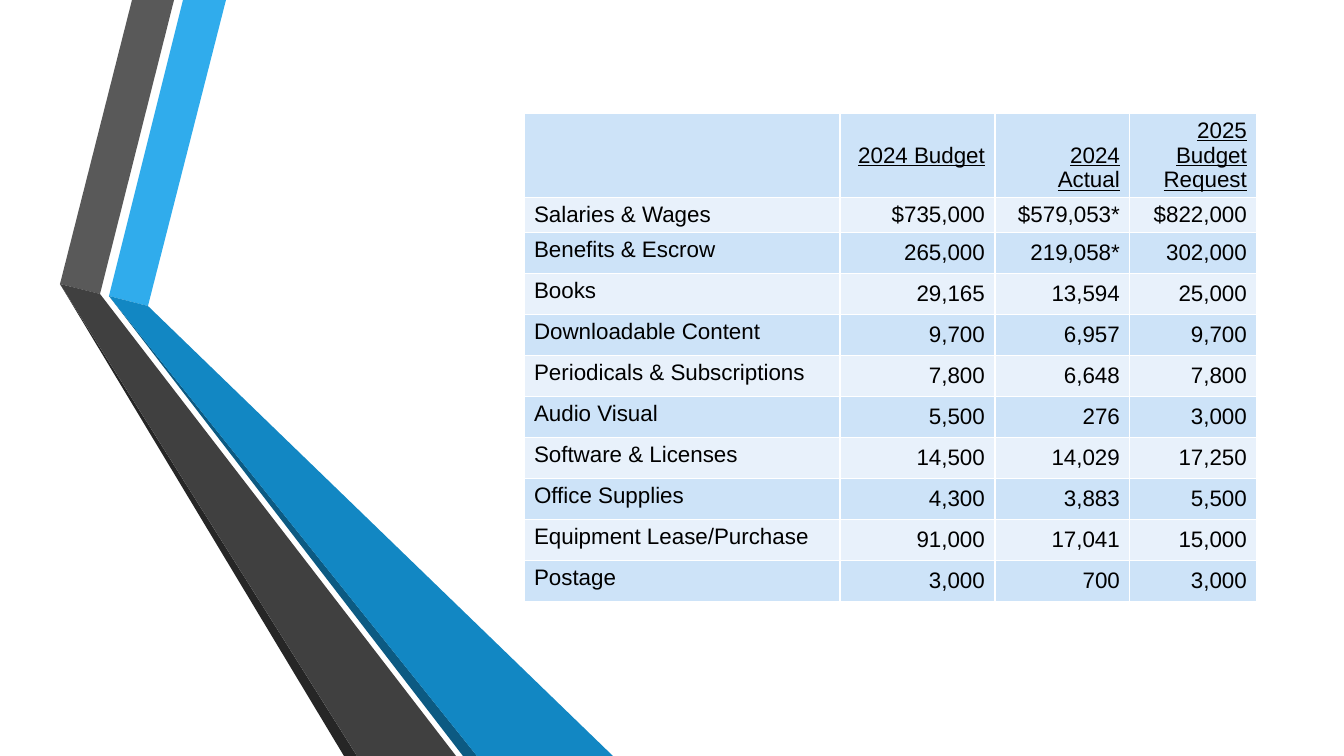
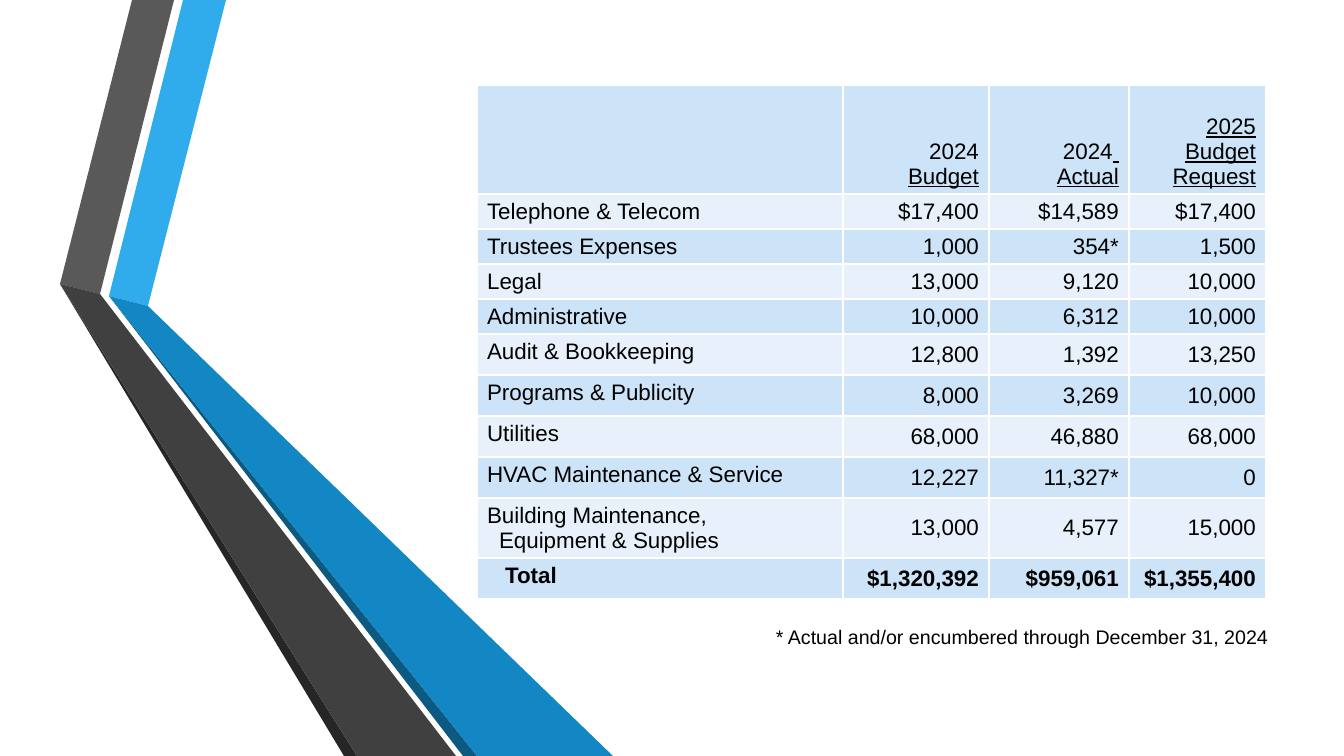
from lxml import etree
from pptx import Presentation
from pptx import util as u
from pptx.dml.color import RGBColor
from pptx.enum import text
from pptx.oxml import ns

# Scale and style
PX = 914400 / 100.8
FONT = "Arial"
BLACK = RGBColor(0x00, 0x00, 0x00)
PALE = RGBColor(0xE8, 0xF1, 0xFB)
SOFT = RGBColor(0xCD, 0xE3, 0xF8)
SKY = RGBColor(0x30, 0xAC, 0xEC)
BLUE = RGBColor(0x12, 0x87, 0xC3)
NAVY = RGBColor(0x0C, 0x5A, 0x82)
GRAY = RGBColor(0x59, 0x59, 0x59)
DARK = RGBColor(0x40, 0x40, 0x40)
COAL = RGBColor(0x26, 0x26, 0x26)
EDGE = "FFFFFF"
TOP, MID, LOW = (text.MSO_ANCHOR.TOP, text.MSO_ANCHOR.MIDDLE,
                 text.MSO_ANCHOR.BOTTOM)

# Folded bands shared by both slides, from back to front
BANDS = [
    (SKY, [(109, 296), (148, 306), (226, 0), (183, 0)]),
    (GRAY, [(100, 294), (174, 0), (132, 0), (60, 284)]),
    (COAL, [(60, 284), (344, 756), (357, 756)]),
    (NAVY, [(109, 296), (463, 756), (477, 756)]),
    (BLUE, [(109, 296), (477, 756), (613, 756), (148, 306)]),
    (DARK, [(456, 756), (100, 294), (60, 284), (357, 756)]),
]

# Header cells: anchor, then paragraphs of (words, underlined) runs
ASK = (LOW, [[("2025 Budget Request", True)]])
TABLES = [
    {
        "at": (524, 113),
        "cols": [316, 155, 135, 127],
        "rows": [84, 35] + [41] * 9,
        "head": [
            (MID, [[("2024 Budget", True)]]),
            (LOW, [[("2024 Actual", True)]]),
            ASK,
        ],
        "body": [
            ("Salaries & Wages", "$735,000", "$579,053*", "$822,000"),
            ("Benefits & Escrow", "265,000", "219,058*", "302,000"),
            ("Books", "29,165", "13,594", "25,000"),
            ("Downloadable Content", "9,700", "6,957", "9,700"),
            ("Periodicals & Subscriptions", "7,800", "6,648", "7,800"),
            ("Audio Visual", "5,500", "276", "3,000"),
            ("Software & Licenses", "14,500", "14,029", "17,250"),
            ("Office Supplies", "4,300", "3,883", "5,500"),
            ("Equipment Lease/Purchase", "91,000", "17,041", "15,000"),
            ("Postage", "3,000", "700", "3,000"),
        ],
    },
    {
        "at": (477, 85),
        "cols": [366, 146, 140, 137],
        "rows": [109] + [35] * 4 + [41] * 4 + [60, 41],
        "head": [
            (LOW, [[("2024", False)], [("Budget", True)]]),
            (LOW, [[("2024", False), (" ", True)], [("Actual", True)]]),
            ASK,
        ],
        "body": [
            ("Telephone & Telecom", "$17,400", "$14,589", "$17,400"),
            ("Trustees Expenses", "1,000", "354*", "1,500"),
            ("Legal", "13,000", "9,120", "10,000"),
            ("Administrative", "10,000", "6,312", "10,000"),
            ("Audit & Bookkeeping", "12,800", "1,392", "13,250"),
            ("Programs & Publicity", "8,000", "3,269", "10,000"),
            ("Utilities", "68,000", "46,880", "68,000"),
            ("HVAC Maintenance & Service", "12,227", "11,327*", "0"),
            ("Building Maintenance,\nEquipment & Supplies",
             "13,000", "4,577", "15,000"),
            ("Total", "$1,320,392", "$959,061", "$1,355,400"),
        ],
        "note": "* Actual and/or encumbered through December 31, 2024",
    },
]
INDENT = {"Equipment & Supplies": 12, "Total": 18}
NOTE_BOX = (766, 620, 519, 34)


def px(n):
    return u.Emu(round(n * PX))


def style(run, size=16, line=False, bold=False):
    font = run.font
    font.name, font.size = FONT, u.Pt(size)
    font.color.rgb = BLACK
    font.underline, font.bold = line, bold


def add_bands(slide, layout):
    """Draw the bands and hand them to the layout, so all slides show them."""
    for color, pts in BANDS:
        pen = slide.shapes.build_freeform(*pts[0], scale=PX)
        pen.add_line_segments(pts[1:], close=True)
        band = pen.convert_to_shape()
        band.shadow.inherit = False
        band.fill.solid()
        band.fill.fore_color.rgb = color
        band.line.fill.background()
        layout.shapes.element.append(band.element)


def paint(cell, color):
    """Fill a cell and give it thin white borders."""
    cell.fill.solid()
    cell.fill.fore_color.rgb = color
    props = cell._tc.get_or_add_tcPr()
    for i, side in enumerate(("lnL", "lnR", "lnT", "lnB")):
        line = etree.Element(ns.qn("a:" + side), w=str(u.Pt(1)))
        fill = etree.SubElement(line, ns.qn("a:solidFill"))
        etree.SubElement(fill, ns.qn("a:srgbClr"), val=EDGE)
        props.insert(i, line)


def write(cell, anchor, paras, right, bold=False):
    cell.vertical_anchor = anchor
    frame = cell.text_frame
    for i, runs in enumerate(paras):
        para = frame.add_paragraph() if i else frame.paragraphs[0]
        if right:
            para.alignment = text.PP_ALIGN.RIGHT
        for words, line in runs:
            run = para.add_run()
            run.text = words
            style(run, line=line, bold=bold)
        if para.text in INDENT:
            para._p.get_or_add_pPr().set("marL", str(px(INDENT[para.text])))


def add_table(slide, data):
    cols, rows = data["cols"], data["rows"]
    grid = slide.shapes.add_table(
        len(rows), len(cols), *map(px, (*data["at"], sum(cols), sum(rows)))).table
    for col, wide in zip(grid.columns, cols):
        col.width = px(wide)
    for r, (row, high) in enumerate(zip(grid.rows, rows)):
        row.height = px(high)
        for cell in row.cells:
            paint(cell, PALE if r % 2 else SOFT)
    for c, (anchor, paras) in enumerate(data["head"], 1):
        write(grid.cell(0, c), anchor, paras, True)
    for r, vals in enumerate(data["body"], 1):
        for c, val in enumerate(vals):
            paras = [[(part, False)] for part in val.split("\n")]
            write(grid.cell(r, c), MID if c else TOP, paras, c > 0,
                  vals[0] == "Total")


def add_note(slide, words):
    frame = slide.shapes.add_textbox(*map(px, NOTE_BOX)).text_frame
    frame.word_wrap = True
    frame.text = words
    style(frame.paragraphs[0].runs[0], size=14)


def main():
    prs = Presentation()
    prs.slide_width, prs.slide_height = px(1344), px(756)
    blank = prs.slide_layouts[6]
    slides = [prs.slides.add_slide(blank) for _ in TABLES]
    add_bands(slides[0], blank)
    for slide, data in zip(slides, TABLES):
        add_table(slide, data)
        if "note" in data:
            add_note(slide, data["note"])
    prs.save("out.pptx")


if __name__ == "__main__":
    main()
